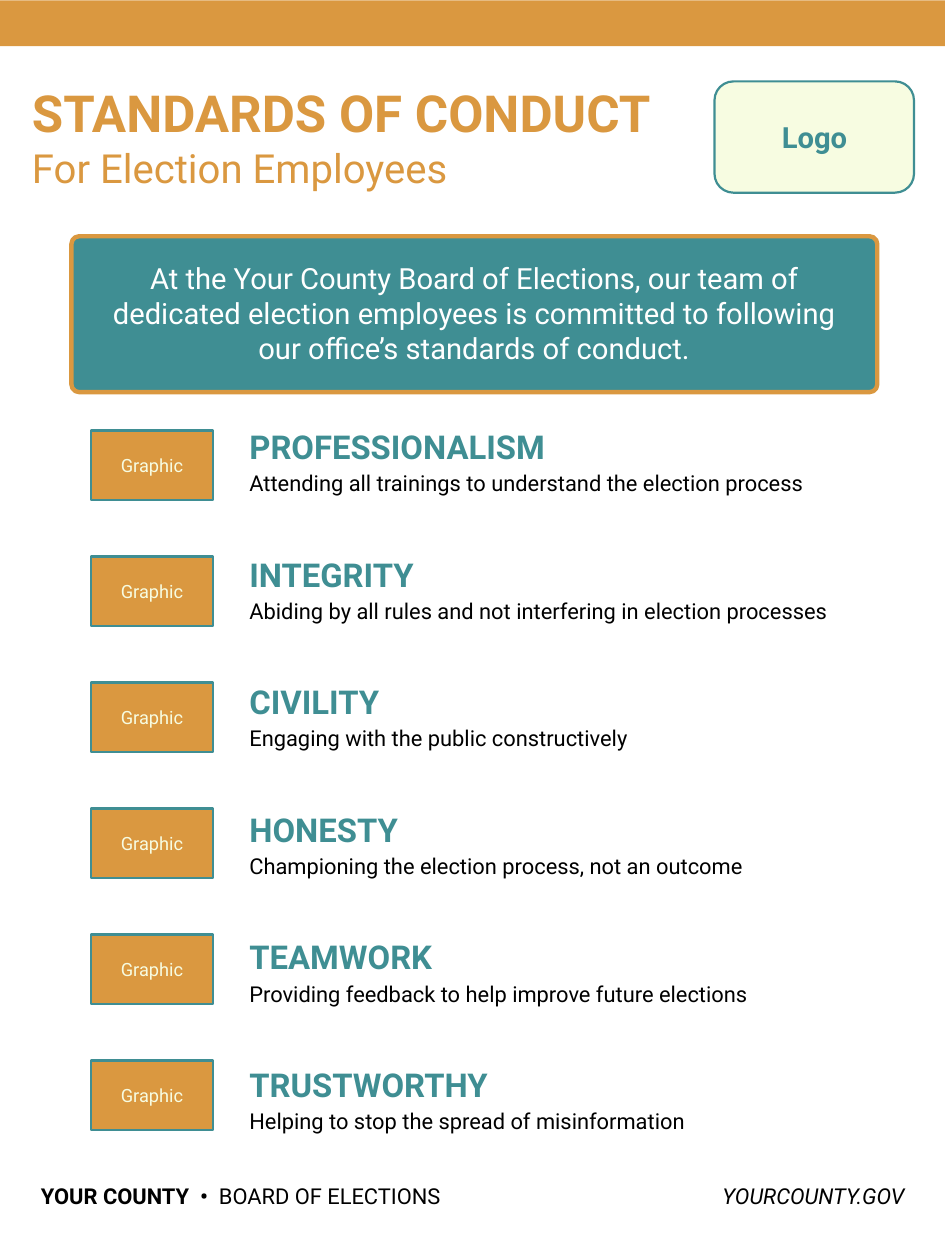
from pptx import Presentation
from pptx.dml.color import RGBColor
from pptx.enum.shapes import MSO_SHAPE
from pptx.enum.text import MSO_ANCHOR, MSO_AUTO_SIZE, PP_ALIGN
from pptx.util import Inches, Pt

RECTANGLE, ROUNDED = MSO_SHAPE.RECTANGLE, MSO_SHAPE.ROUNDED_RECTANGLE
LEFT, CENTER, RIGHT = PP_ALIGN.LEFT, PP_ALIGN.CENTER, PP_ALIGN.RIGHT
TOP, MIDDLE = MSO_ANCHOR.TOP, MSO_ANCHOR.MIDDLE
GROW, FIXED = MSO_AUTO_SIZE.SHAPE_TO_FIT_TEXT, MSO_AUTO_SIZE.NONE

ORANGE, TEAL, CREAM = "DA9840", "3F8E93", "F7FCE1"
BLACK, WHITE = "000000", "FFFFFF"

STANDARDS = [
    ("PROFESSIONALISM", "Attending all trainings to understand the election process"),
    ("INTEGRITY", "Abiding by all rules and not interfering in election processes"),
    ("CIVILITY", "Engaging with the public constructively"),
    ("HONESTY", "Championing the election process, not an outcome"),
    ("TEAMWORK", "Providing feedback to help improve future elections"),
    ("TRUSTWORTHY", "Helping to stop the spread of misinformation"),
]
GRAPHIC_TOP, GRAPHIC_PITCH = 8.2, 2.4
HEADING_TOP, HEADING_PITCH = 8.13, 2.43
DETAIL_DROP = 0.82


def color(hex_code):
    return RGBColor.from_string(hex_code)


def write(box, spans, align=LEFT, anchor=TOP, inset=0, fit=FIXED):
    """Fill a shape with one paragraph; spans are (text, size, colour, format)."""
    frame = box.text_frame
    margin = Inches(inset)
    frame_format = {
        "word_wrap": True, "auto_size": fit, "vertical_anchor": anchor,
        "margin_left": margin, "margin_right": margin,
        "margin_top": margin, "margin_bottom": margin,
    }
    for name, value in frame_format.items():
        setattr(frame, name, value)
    para = frame.paragraphs[0]
    para.alignment = align
    for text, size, hex_code, extra in spans:
        span = para.add_run()
        span.text = text
        font_format = {"name": "Roboto", "size": Pt(size), **extra}
        for name, value in font_format.items():
            setattr(span.font, name, value)
        span.font.color.rgb = color(hex_code)


def add_text(page, place, spans, **layout):
    box = page.shapes.add_textbox(*map(Inches, place))
    write(box, spans, **layout)


def add_panel(page, kind, place, fill, line=None, width=3, rounding=None):
    panel = page.shapes.add_shape(kind, *map(Inches, place))
    panel.shadow.inherit = False
    panel.fill.solid()
    panel.fill.fore_color.rgb = color(fill)
    if line:
        panel.line.color.rgb = color(line)
        panel.line.width = Pt(width)
    else:
        panel.line.fill.background()
    if rounding is not None:
        panel.adjustments[0] = rounding
    return panel


def add_standard(page, index, heading, detail):
    heading_top = HEADING_TOP + index * HEADING_PITCH
    graphic_top = GRAPHIC_TOP + index * GRAPHIC_PITCH
    add_text(page, (4.75, heading_top, 6.91, 0.76),
             [(heading, 45, TEAL, {"bold": True})], fit=GROW)
    add_text(page, (4.75, heading_top + DETAIL_DROP, 11.6, 0.5),
             [(detail, 30, BLACK, {})], fit=GROW)
    graphic = add_panel(page, RECTANGLE, (1.73, graphic_top, 2.33, 1.32), ORANGE, TEAL)
    write(graphic, [("Graphic", 25, CREAM, {})], align=CENTER, anchor=MIDDLE, inset=0.1)


def add_header(page):
    add_panel(page, RECTANGLE, (0, 0.01, 18, 0.87), ORANGE)
    add_text(page, (0.61, 1.55, 12.26, 1.09),
             [("STANDARDS OF CONDUCT", 70, ORANGE, {"bold": True})])
    add_text(page, (0.61, 2.73, 12.26, 0.87),
             [("For Election Employees", 55, ORANGE, {})])
    add_panel(page, ROUNDED, (13.61, 1.55, 3.8, 2.12), CREAM, TEAL, rounding=0.17)
    add_text(page, (13.91, 2.31, 3.21, 0.61), [("Logo", 40, TEAL, {"bold": True})],
             align=CENTER, anchor=MIDDLE, inset=0.1)


def add_commitment(page):
    add_panel(page, ROUNDED, (1.36, 4.5, 15.35, 2.97), TEAL, ORANGE, width=6, rounding=0.05)
    statement = ("At the Your County Board of Elections, our team of dedicated "
                 "election employees is committed to following our office’s "
                 "standards of conduct.")
    add_text(page, (2, 4.99, 14.06, 1.92), [(statement, 40, WHITE, {})],
             align=CENTER, anchor=MIDDLE, inset=0.1)


def add_footer(page):
    add_text(page, (0.78, 22.53, 8.8, 0.5),
             [("YOUR COUNTY  •  ", 30, BLACK, {"bold": True}),
              ("BOARD OF ELECTIONS", 30, BLACK, {})], fit=GROW)
    add_text(page, (10.75, 22.53, 6.48, 0.5),
             [("YOURCOUNTY.GOV", 30, BLACK, {"italic": True})], align=RIGHT, fit=GROW)


def main():
    deck = Presentation()
    deck.slide_width, deck.slide_height = Inches(18), Inches(24)
    page = deck.slides.add_slide(deck.slide_layouts[6])
    add_header(page)
    add_commitment(page)
    for index, (heading, detail) in enumerate(STANDARDS):
        add_standard(page, index, heading, detail)
    add_footer(page)
    deck.save("out.pptx")


if __name__ == "__main__":
    main()
